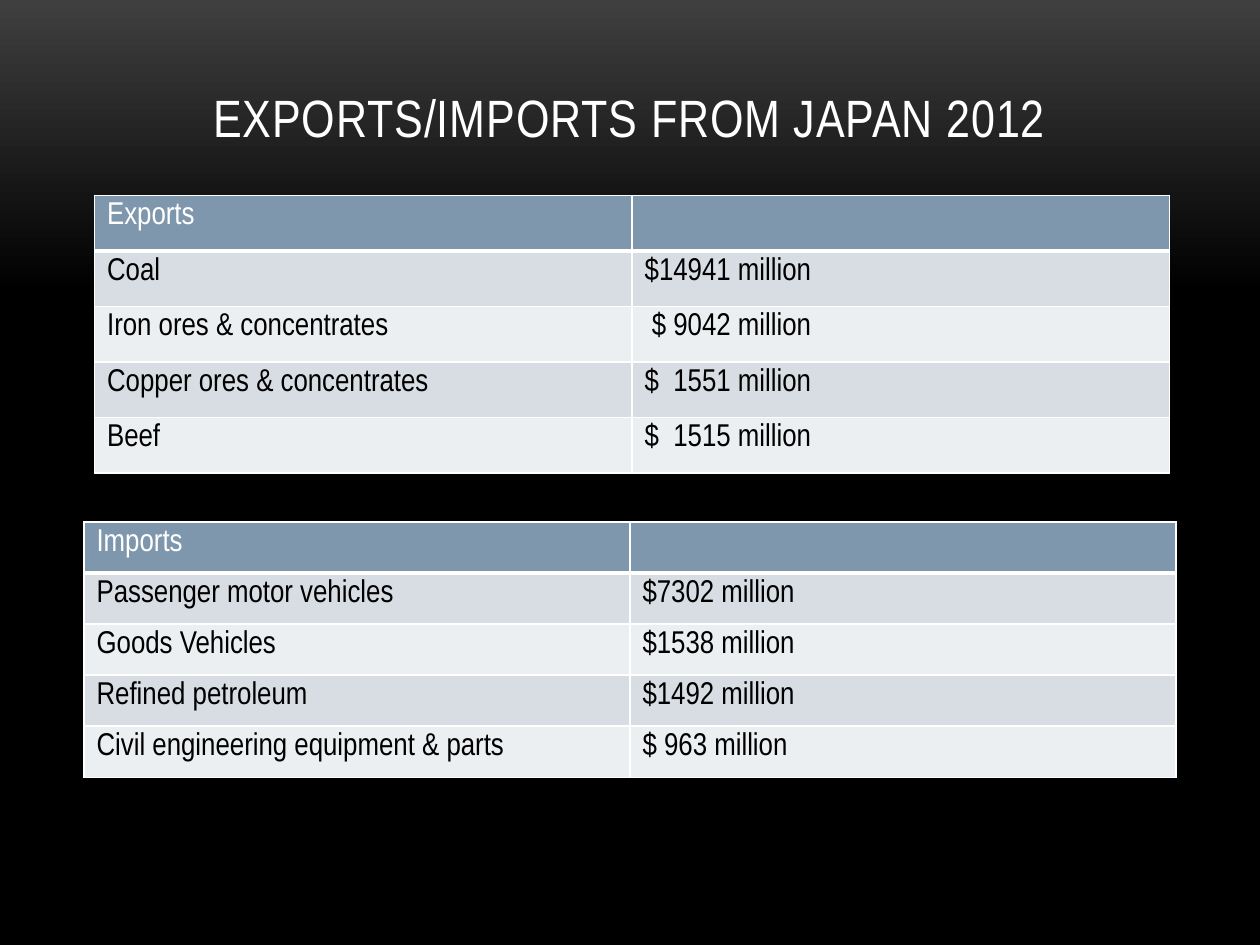
from dataclasses import dataclass

from lxml.etree import SubElement
from pptx import Presentation
from pptx.dml.color import RGBColor
from pptx.enum.text import MSO_ANCHOR, PP_ALIGN
from pptx.oxml.ns import qn
from pptx.util import Pt

FONT = "Arial Narrow"
WHITE = RGBColor(0xFF, 0xFF, 0xFF)
BLACK = RGBColor(0x00, 0x00, 0x00)
CHARCOAL = RGBColor(0x3F, 0x3F, 0x3F)
HEADER_BLUE = RGBColor(0x7E, 0x97, 0xAD)
BANDS = (RGBColor(0xD8, 0xDD, 0xE3), RGBColor(0xEC, 0xEF, 0xF1))


@dataclass
class TradeTable:
    heading: str
    left: float
    top: float
    width: float
    row_height: float
    goods: list[tuple[str, str]]


TABLES = [
    TradeTable("Imports", 48, 298.2, 624, 29.2, [
        ("Passenger motor vehicles", "$7302 million"),
        ("Goods Vehicles", "$1538 million"),
        ("Refined petroleum", "$1492 million"),
        ("Civil engineering equipment & parts", "$ 963 million"),
    ]),
    TradeTable("Exports", 54, 111.6, 614.4, 31.75, [
        ("Coal", "$14941 million"),
        ("Iron ores & concentrates", " $ 9042 million"),
        ("Copper ores & concentrates", "$  1551 million"),
        ("Beef", "$  1515 million"),
    ]),
]


def style_runs(para, size: float, color: RGBColor) -> None:
    for run in para.runs:
        run.font.name = FONT
        run.font.size = Pt(size)
        run.font.color.rgb = color


def add_borders(cell, bottom_width: float) -> None:
    properties = cell._tc.get_or_add_tcPr()
    for side, width in (("L", 1), ("R", 1), ("T", 1), ("B", bottom_width)):
        line = SubElement(properties, qn(f"a:ln{side}"), w=str(Pt(width)))
        fill = SubElement(line, qn("a:solidFill"))
        SubElement(fill, qn("a:srgbClr"), val=str(WHITE))


def add_trade_table(page, trade: TradeTable) -> None:
    rows = [(trade.heading, ""), *trade.goods]
    frame = page.shapes.add_table(
        len(rows), 2, Pt(trade.left), Pt(trade.top),
        Pt(trade.width), Pt(trade.row_height * len(rows)))
    table = frame.table
    for column in table.columns:
        column.width = Pt(trade.width / 2)
    for row_index, texts in enumerate(rows):
        table.rows[row_index].height = Pt(trade.row_height)
        is_header = row_index == 0
        for column_index, text in enumerate(texts):
            cell = table.cell(row_index, column_index)
            add_borders(cell, 3 if is_header else 1)
            cell.fill.solid()
            cell.fill.fore_color.rgb = HEADER_BLUE if is_header else BANDS[(row_index - 1) % 2]
            para = cell.text_frame.paragraphs[0]
            para.text = text
            para.font.size = Pt(18)
            style_runs(para, 18, WHITE if is_header else BLACK)


def add_title(page, text: str) -> None:
    box = page.shapes.add_textbox(Pt(48), Pt(21.6), Pt(624), Pt(90))
    box.text_frame.word_wrap = True
    box.text_frame.vertical_anchor = MSO_ANCHOR.MIDDLE
    para = box.text_frame.paragraphs[0]
    para.text = text
    para.alignment = PP_ALIGN.CENTER
    style_runs(para, 30, WHITE)
    # Letter spacing in hundredths of a point
    para.runs[0].font._element.set("spc", "50")


def paint_background(page) -> None:
    fill = page.background.fill
    fill.gradient()
    fill.gradient_angle = 270
    for stop, position, color in zip(fill.gradient_stops, (0, 0.31), (CHARCOAL, BLACK)):
        stop.position = position
        stop.color.rgb = color


def main() -> None:
    deck = Presentation()
    deck.slide_width, deck.slide_height = Pt(720), Pt(540)
    page = deck.slides.add_slide(deck.slide_layouts[6])
    paint_background(page)
    add_title(page, "EXPORTS/IMPORTS FROM JAPAN 2012")
    for trade in TABLES:
        add_trade_table(page, trade)
    deck.save("out.pptx")


if __name__ == "__main__":
    main()
